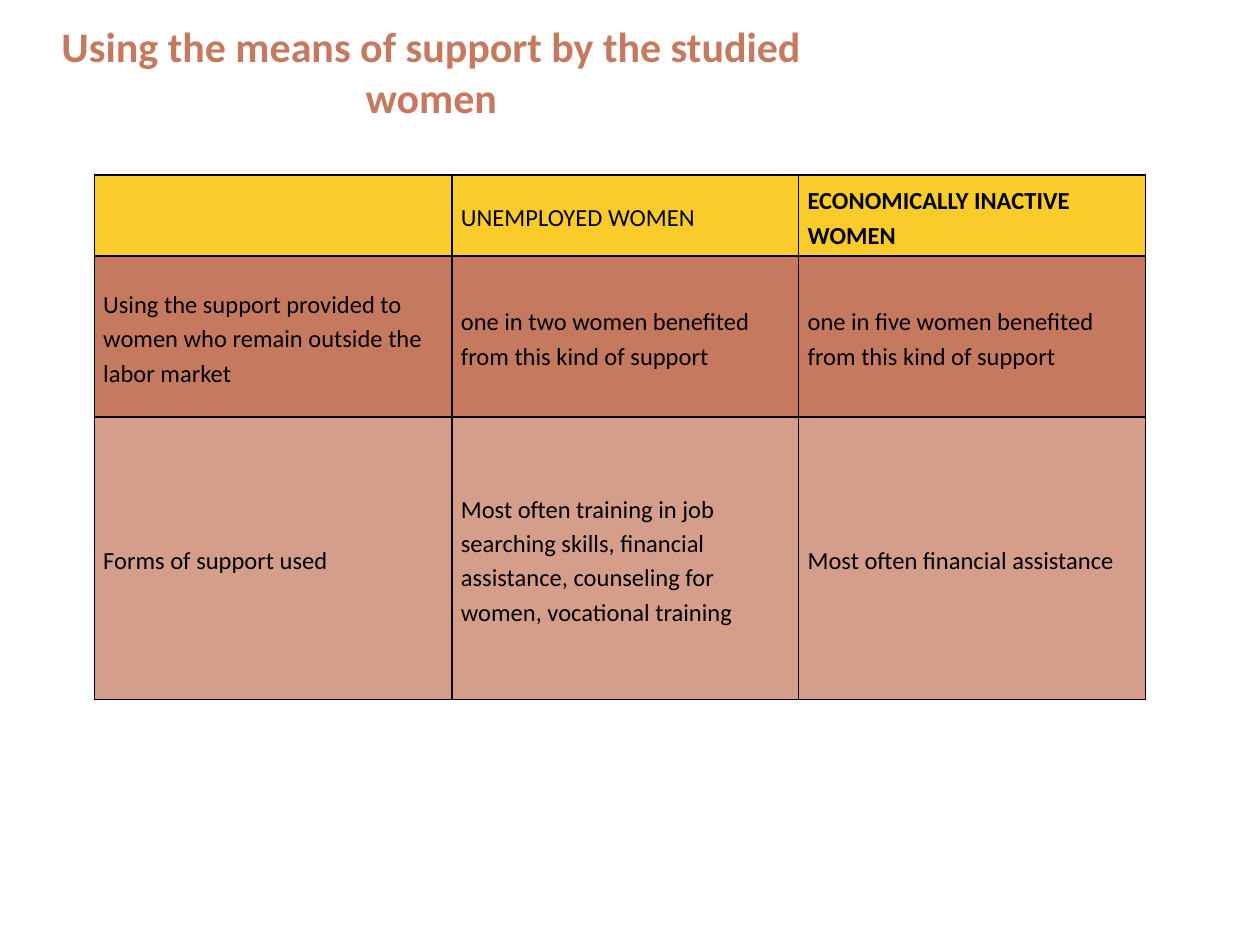
from lxml import etree
from pptx import Presentation
from pptx.dml.color import RGBColor
from pptx.enum.text import MSO_ANCHOR, PP_ALIGN
from pptx.oxml.ns import qn
from pptx.util import Cm, Pt

MIDDLE = MSO_ANCHOR.MIDDLE
CENTER = PP_ALIGN.CENTER

FONT = "Calibri"
BLACK = RGBColor(0x00, 0x00, 0x00)
YELLOW = RGBColor(0xF9, 0xCC, 0x2B)
TERRACOTTA = RGBColor(0xC5, 0x7A, 0x5F)
LIGHT_TERRACOTTA = RGBColor(0xD5, 0x9E, 0x8B)

COLUMN_WIDTHS = [Cm(7.21), Cm(6.99), Cm(6.99)]
ROWS = [
    (Cm(1.63), YELLOW, ["", "UNEMPLOYED WOMEN", "ECONOMICALLY INACTIVE WOMEN"]),
    (Cm(3.25), TERRACOTTA, [
        "Using the support provided to women who remain outside the labor market",
        "one in two women benefited from this kind of support",
        "one in five women benefited from this kind of support",
    ]),
    (Cm(5.69), LIGHT_TERRACOTTA, [
        "Forms of support used",
        "Most often training in job searching skills, financial assistance, "
        "counseling for women, vocational training",
        "Most often financial assistance",
    ]),
]
BOLD_CELL = (0, 2)


def add_run(paragraph, text, size, color, bold):
    run = paragraph.add_run()
    run.text = text
    run.font.name = FONT
    run.font.size = Pt(size)
    run.font.bold = bold
    run.font.color.rgb = color


def add_title(slide, text):
    shape = slide.shapes.add_textbox(Cm(0.3), Cm(0.33), Cm(16.79), Cm(2.21))
    frame = shape.text_frame
    frame.word_wrap = True
    frame.vertical_anchor = MIDDLE
    paragraph = frame.paragraphs[0]
    paragraph.alignment = CENTER
    add_run(paragraph, text, 24, TERRACOTTA, True)


def set_borders(cell, color, width):
    properties = cell._tc.get_or_add_tcPr()
    for side in ("a:lnL", "a:lnR", "a:lnT", "a:lnB"):
        line = etree.SubElement(properties, qn(side), w=str(width))
        fill = etree.SubElement(line, qn("a:solidFill"))
        etree.SubElement(fill, qn("a:srgbClr"), val=str(color))


def format_cell(cell, text, fill_color, bold):
    set_borders(cell, BLACK, Pt(1))
    cell.fill.solid()
    cell.fill.fore_color.rgb = fill_color
    cell.vertical_anchor = MIDDLE
    cell.margin_left = cell.margin_right = Cm(0.18)
    cell.margin_top = Cm(0.03)
    cell.margin_bottom = Cm(0)
    if text:
        paragraph = cell.text_frame.paragraphs[0]
        paragraph.line_spacing = 1.15
        add_run(paragraph, text, 14, BLACK, bold)


def add_support_table(slide):
    width = sum(COLUMN_WIDTHS)
    height = sum(row_height for row_height, _, _ in ROWS)
    table = slide.shapes.add_table(
        len(ROWS), len(COLUMN_WIDTHS), Cm(1.9), Cm(3.53), width, height
    ).table
    table.first_row = False
    table.horz_banding = False
    for column, column_width in zip(table.columns, COLUMN_WIDTHS):
        column.width = column_width
    for row_index, (row_height, fill_color, texts) in enumerate(ROWS):
        table.rows[row_index].height = row_height
        for column_index, text in enumerate(texts):
            bold = (row_index, column_index) == BOLD_CELL
            format_cell(table.cell(row_index, column_index), text, fill_color, bold)


def main():
    presentation = Presentation()
    presentation.slide_width = Cm(25.4)
    presentation.slide_height = Cm(19.05)
    slide = presentation.slides.add_slide(presentation.slide_layouts[6])
    add_title(slide, "Using the means of support by the studied women")
    add_support_table(slide)
    presentation.save("out.pptx")


if __name__ == "__main__":
    main()
